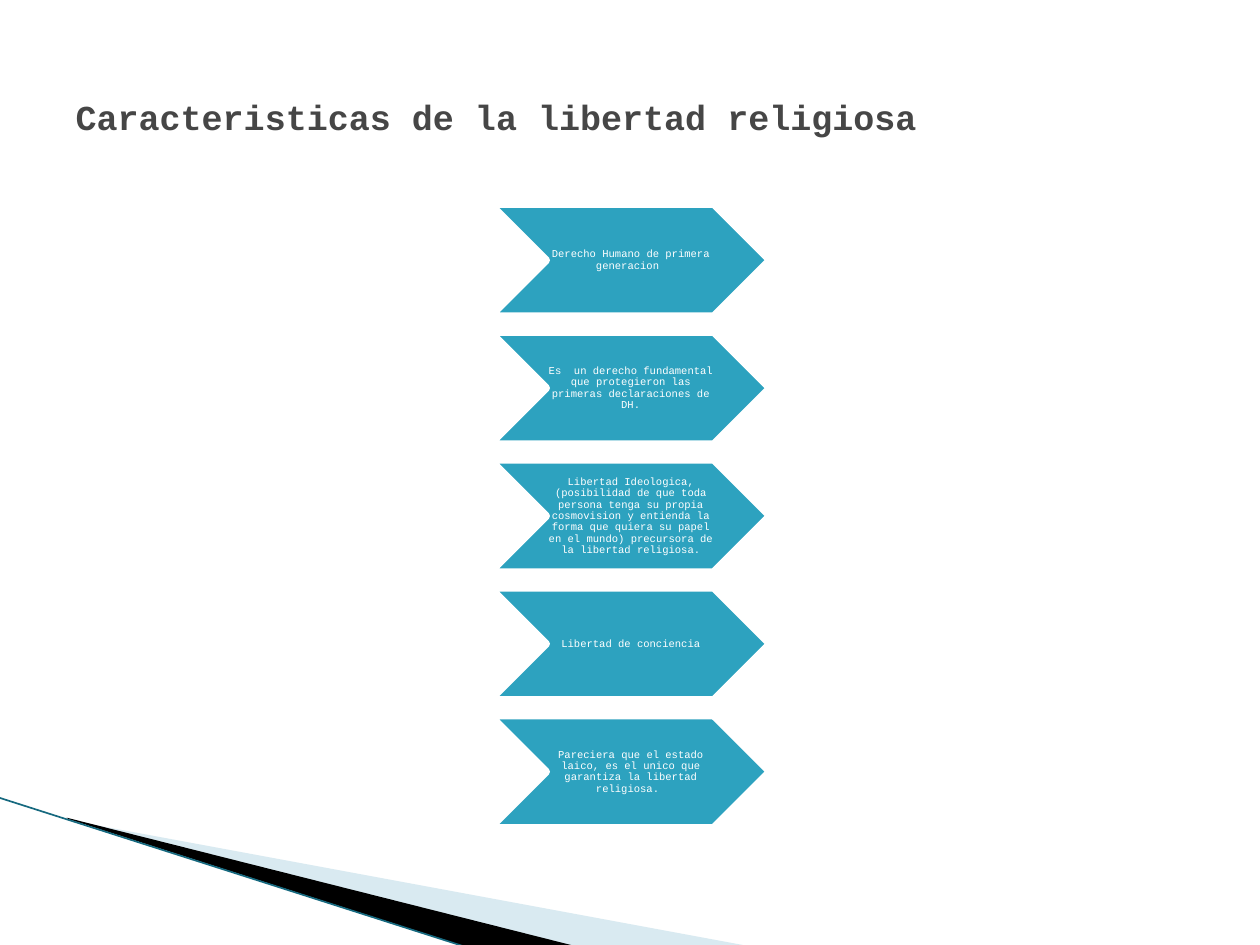
"""Build the slide on the characteristics of religious freedom."""
from lxml import etree
from pptx import Presentation
from pptx.dml.color import RGBColor
from pptx.enum.shapes import MSO_CONNECTOR, MSO_SHAPE
from pptx.enum.text import MSO_ANCHOR, PP_ALIGN
from pptx.oxml.ns import qn
from pptx.util import Inches, Pt

CHEVRON = MSO_SHAPE.CHEVRON
STRAIGHT = MSO_CONNECTOR.STRAIGHT
MIDDLE = MSO_ANCHOR.MIDDLE
LEFT, CENTER = PP_ALIGN.LEFT, PP_ALIGN.CENTER

WHITE = RGBColor(0xFF, 0xFF, 0xFF)
BLACK = RGBColor(0x00, 0x00, 0x00)
TEAL = RGBColor(0x2D, 0xA2, 0xBF)
DARK_TEAL = RGBColor(0x16, 0x69, 0x7F)
PALE_BLUE = RGBColor(0xA0, 0xCB, 0xDC)
GRAY = RGBColor(0x46, 0x46, 0x46)

TITLE = "Caracteristicas de la libertad religiosa"
CHARACTERISTICS = [
    "Derecho Humano de primera generacion ",
    "Es  un derecho fundamental que protegieron las primeras declaraciones de DH.",
    "Libertad Ideologica, (posibilidad de que toda persona tenga su propia "
    "cosmovision y entienda la forma que quiera su papel en el mundo) "
    "precursora de la libertad religiosa.",
    "Libertad de conciencia",
    "Pareciera que el estado laico, es el unico que garantiza la libertad religiosa. ",
]
SWOOSHES = [
    ([(0.55, 6.51), (5.95, 7.51), (4.56, 7.51), (0.55, 6.5)], PALE_BLUE, 40),
    ([(0.53, 6.49), (4.57, 7.51), (3.72, 7.52), (0.54, 6.5)], BLACK, 100),
]
EDGE = (-0.01, 6.33, 3.71, 7.52)
TITLE_BOX = (0.5, 0.3, 9, 1.25)
TITLE_FONT = {"name": "Courier New", "size": Pt(20), "bold": True}
BODY_FONT = {"name": "Courier New", "size": Pt(6), "bold": False}
CHEVRON_LEFT, CHEVRON_TOP, CHEVRON_WIDTH, CHEVRON_HEIGHT = 3.89, 1.62, 2.22, 0.89
CHEVRON_STEP = 1.01 + 0.005


def inches(values):
    return [Inches(value) for value in values]


def write(shape, text, alignment, font_format, color):
    frame = shape.text_frame
    frame.word_wrap = True
    frame.vertical_anchor = MIDDLE
    paragraph = frame.paragraphs[0]
    paragraph.alignment = alignment
    run = paragraph.add_run()
    run.text = text
    for name, value in font_format.items():
        setattr(run.font, name, value)
    run.font.color.rgb = color
    return frame


def add_swoosh(slide, points, color, opacity):
    start, *others = [inches(point) for point in points]
    builder = slide.shapes.build_freeform(*start)
    builder.add_line_segments(others)
    shape = builder.convert_to_shape()
    shape.shadow.inherit = False
    shape.fill.solid()
    shape.fill.fore_color.rgb = color
    shape.line.fill.background()
    if opacity < 100:
        fill_color = shape._element.spPr.find(".//" + qn("a:srgbClr"))
        etree.SubElement(fill_color, qn("a:alpha"), val=str(opacity * 1000))


def add_edge(slide):
    line = slide.shapes.add_connector(STRAIGHT, *inches(EDGE))
    line.line.color.rgb = DARK_TEAL
    line.line.width = Pt(0.95)
    etree.SubElement(line._element.spPr, qn("a:effectLst"))


def add_chevron(slide, index, text):
    top = CHEVRON_TOP + index * CHEVRON_STEP
    shape = slide.shapes.add_shape(
        CHEVRON, *inches((CHEVRON_LEFT, top, CHEVRON_WIDTH, CHEVRON_HEIGHT)))
    shape.shadow.inherit = False
    shape.fill.solid()
    shape.fill.fore_color.rgb = TEAL
    shape.line.color.rgb = WHITE
    shape.line.width = Pt(4.33)
    frame = write(shape, text, CENTER, BODY_FONT, WHITE)
    frame.margin_left = Inches(0.01)
    frame.margin_top = frame.margin_right = frame.margin_bottom = 0
    frame.paragraphs[0].line_spacing = 0.9


def main():
    presentation = Presentation()
    presentation.slide_width, presentation.slide_height = inches((10, 7.5))
    slide = presentation.slides.add_slide(presentation.slide_layouts[5])
    for points, color, opacity in SWOOSHES:
        add_swoosh(slide, points, color, opacity)
    add_edge(slide)
    for index, text in enumerate(CHARACTERISTICS):
        add_chevron(slide, index, text)
    title = slide.shapes.title
    title.left, title.top, title.width, title.height = inches(TITLE_BOX)
    write(title, TITLE, LEFT, TITLE_FONT, GRAY)
    presentation.save("out.pptx")


if __name__ == "__main__":
    main()
